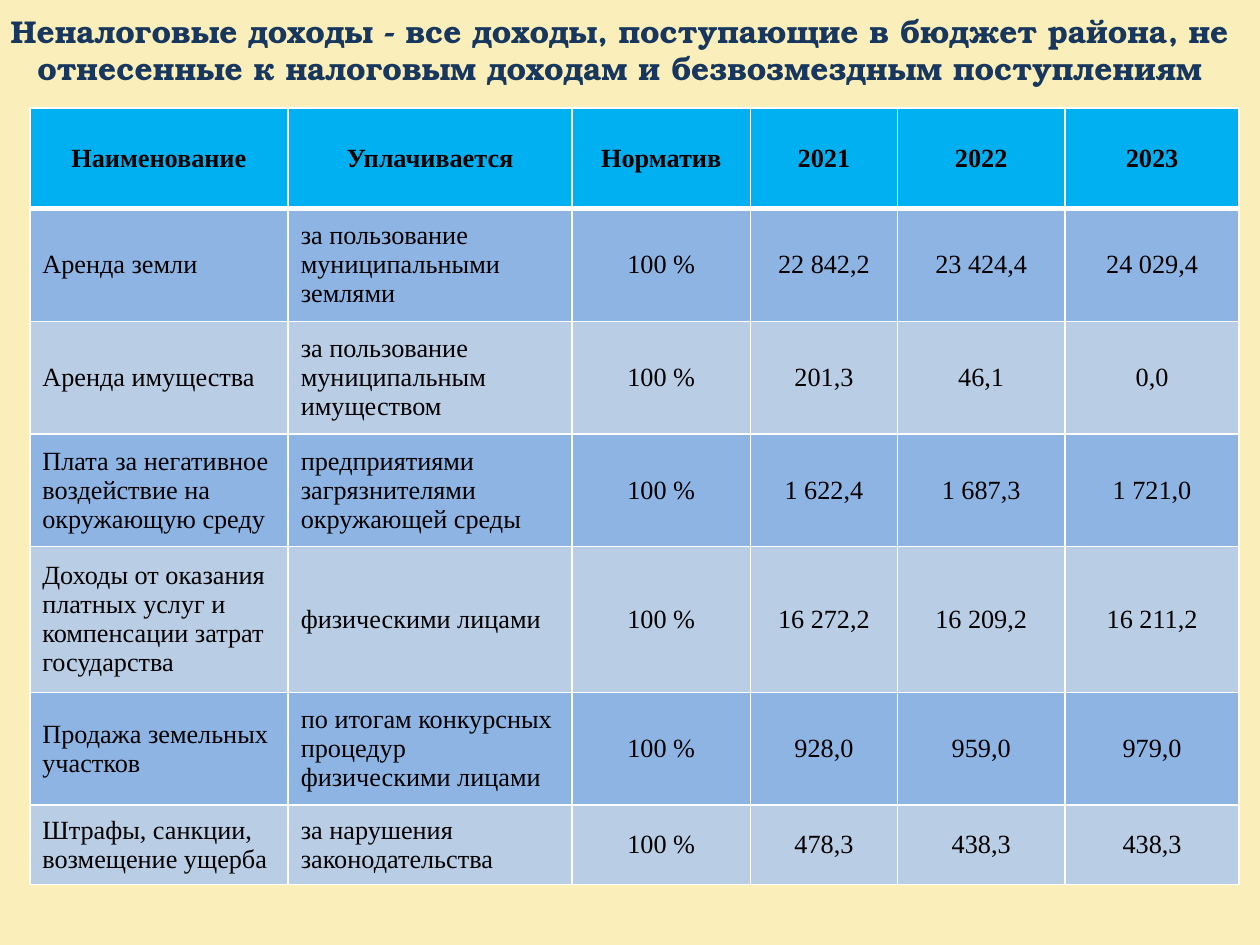
from lxml.etree import SubElement
from pptx import Presentation
from pptx.dml.color import RGBColor
from pptx.enum.text import MSO_ANCHOR as Anchor, PP_ALIGN as Align
from pptx.oxml.ns import qn
from pptx.util import Cm, Pt

HEADINGS = ["Наименование", "Уплачивается", "Норматив", "2021", "2022", "2023"]
INCOMES = [
    ["Аренда земли", "за пользование муниципальными землями",
     "100 %", "22 842,2", "23 424,4", "24 029,4"],
    ["Аренда имущества", "за пользование муниципальным имуществом",
     "100 %", "201,3", "46,1", "0,0"],
    ["Плата за негативное воздействие на окружающую среду",
     "предприятиями загрязнителями окружающей среды",
     "100 %", "1 622,4", "1 687,3", "1 721,0"],
    ["Доходы от оказания платных услуг и компенсации затрат государства",
     "физическими лицами", "100 %", "16 272,2", "16 209,2", "16 211,2"],
    ["Продажа земельных участков",
     "по итогам конкурсных процедур физическими лицами",
     "100 %", "928,0", "959,0", "979,0"],
    ["Штрафы, санкции,\nвозмещение ущерба", "за нарушения законодательства",
     "100 %", "478,3", "438,3", "438,3"],
]
COLUMN_WIDTHS = [5.21, 5.72, 3.6, 2.96, 3.38, 3.51]
ROW_HEIGHTS = [2.03, 2.27, 2.27, 2.27, 2.94, 2.27, 1.6]


def rgb(code):
    return RGBColor.from_string(code)


def write(frame, text, font="Times New Roman", size=15, color="000000",
          bold=False, align=Align.LEFT):
    frame.word_wrap = True
    for index, line in enumerate(text.split("\n")):
        paragraph = frame.paragraphs[0] if index == 0 else frame.add_paragraph()
        paragraph.alignment = align
        run = paragraph.add_run()
        run.text = line
        run.font.name = font
        run.font.size = Pt(size)
        run.font.bold = bold
        run.font.color.rgb = rgb(color)


class IncomeSlide:
    paper = "FAEEBA"
    title_font = "TeX Gyre Bonum"
    title_color = "17375E"
    header_fill = "00B0F0"
    row_fills = ["8EB4E3", "B9CDE5"]
    border_color = "FFFFFF"

    def __init__(self, deck):
        self.slide = deck.slides.add_slide(deck.slide_layouts[6])
        background = self.slide.background.fill
        background.solid()
        background.fore_color.rgb = rgb(self.paper)

    def title(self, text, left, top, width, height):
        frame = self.slide.shapes.add_textbox(
            Cm(left), Cm(top), Cm(width), Cm(height)).text_frame
        frame.vertical_anchor = Anchor.MIDDLE
        frame.margin_bottom = Cm(0.9)
        write(frame, text, font=self.title_font, size=18,
              color=self.title_color, bold=True, align=Align.CENTER)

    def borders(self, cell, **points):
        properties = cell._tc.get_or_add_tcPr()
        for side, width in points.items():
            line = SubElement(properties, qn(f"a:ln{side}"), w=str(Pt(width)))
            fill = SubElement(line, qn("a:solidFill"))
            SubElement(fill, qn("a:srgbClr"), val=self.border_color)

    def table(self, rows, left, top, widths, heights):
        table = self.slide.shapes.add_table(
            len(rows), len(widths), Cm(left), Cm(top),
            Cm(sum(widths)), Cm(sum(heights))).table
        table.horz_banding = False
        for column, width in zip(table.columns, widths):
            column.width = Cm(width)
        for r, (row, height) in enumerate(zip(rows, heights)):
            table.rows[r].height = Cm(height)
            header = r == 0
            for c, text in enumerate(row):
                cell = table.cell(r, c)
                cell.vertical_anchor = Anchor.MIDDLE
                self.borders(cell, L=1, R=1, T=3 if r == 1 else 1,
                             B=3 if header else 1)
                cell.fill.solid()
                cell.fill.fore_color.rgb = rgb(
                    self.header_fill if header else self.row_fills[(r - 1) % 2])
                write(cell.text_frame, text, bold=header,
                      align=Align.CENTER if header or c > 1 else Align.LEFT)


def main():
    deck = Presentation()
    deck.slide_width, deck.slide_height = Cm(25.4), Cm(19.05)
    page = IncomeSlide(deck)
    page.title("Неналоговые доходы - все доходы, поступающие в бюджет района, "
               "не отнесенные к налоговым доходам и безвозмездным поступлениям",
               -1, 0, 27, 2.77)
    page.table([HEADINGS] + INCOMES, 0.6, 2.18, COLUMN_WIDTHS, ROW_HEIGHTS)
    deck.save("out.pptx")


if __name__ == "__main__":
    main()
